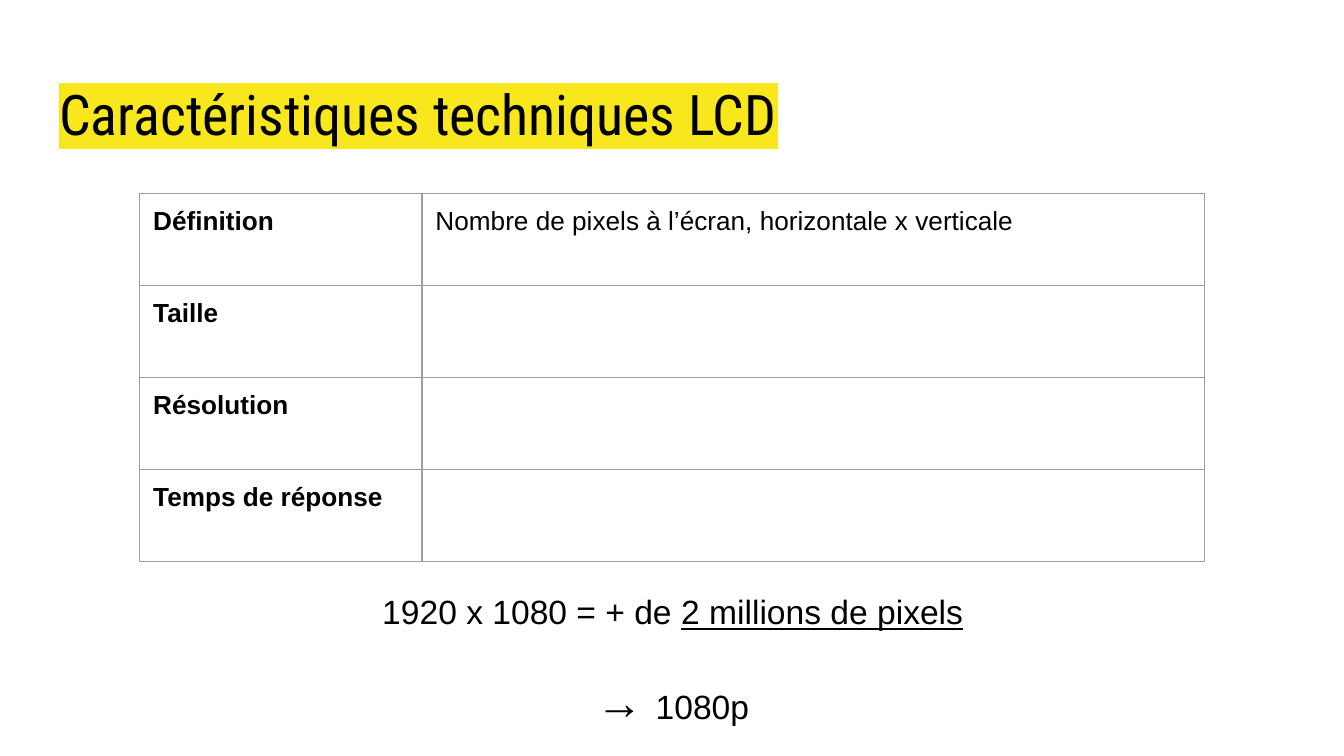
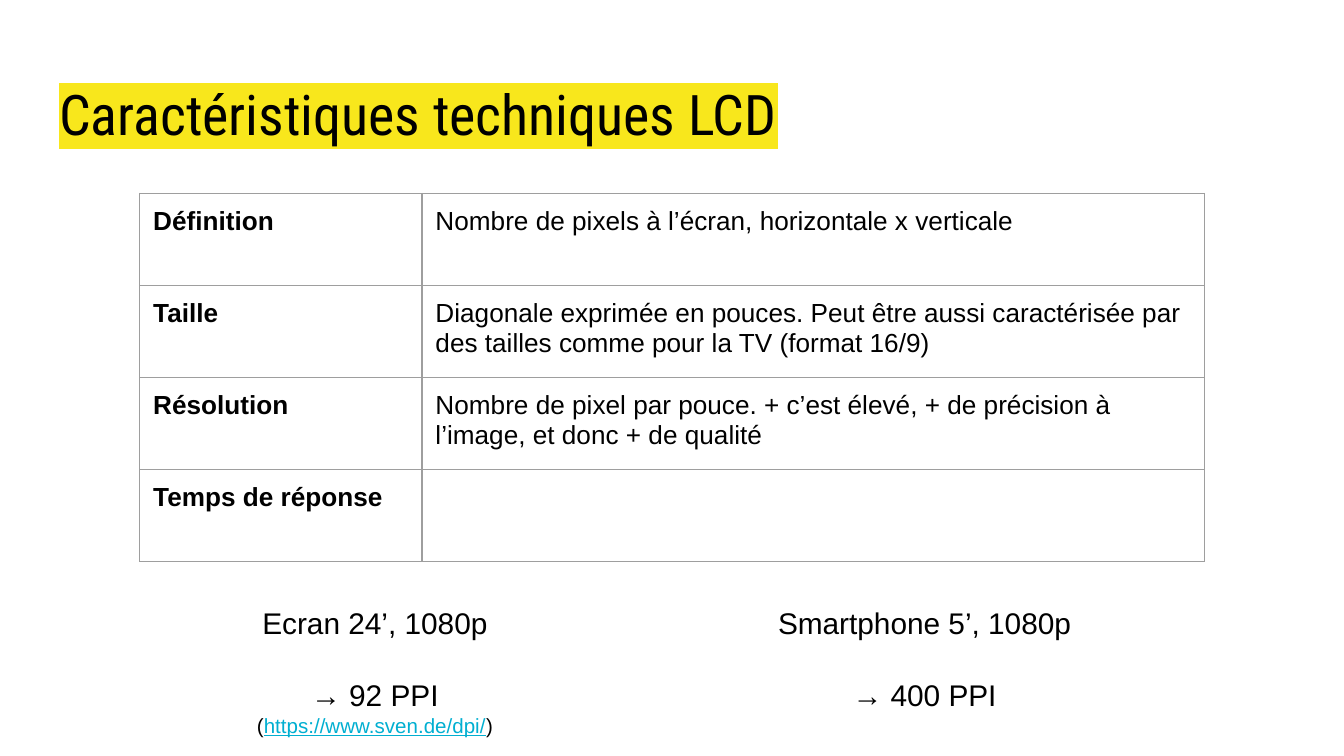
"""Builds two slides on the technical characteristics of LCD screens."""
from lxml import etree
from pptx import Presentation
from pptx.dml.color import RGBColor
from pptx.enum.text import MSO_ANCHOR, MSO_AUTO_SIZE, PP_ALIGN
from pptx.oxml.ns import qn
from pptx.util import Inches, Pt

LEFT, CENTER = PP_ALIGN.LEFT, PP_ALIGN.CENTER
TOP = MSO_ANCHOR.TOP
NO_AUTOFIT = MSO_AUTO_SIZE.NONE
TITLE_ONLY = 5

COLORS = {"text": "000000", "highlight": "F8E71C", "border": "9E9E9E", "link": "01AFD1"}
TITLE_FONT, BODY_FONT = "Roboto Condensed", "Arial"
TITLE = "Caractéristiques techniques LCD"
TERMS = ["Définition", "Taille", "Résolution", "Temps de réponse"]
DEFINITION = "Nombre de pixels à l’écran, horizontale x verticale"
SIZE = ("Diagonale exprimée en pouces. Peut être aussi caractérisée par "
        "des tailles comme pour la TV (format 16/9)")
RESOLUTION = ("Nombre de pixel par pouce. + c’est élevé, + de précision à "
              "l’image, et donc + de qualité")


class Deck:
    """Holds the style and the current slide."""

    def __init__(self):
        """Opens a 16:9 presentation."""
        self.presentation = Presentation()
        self.presentation.slide_width = Inches(10)
        self.presentation.slide_height = Inches(10) * 9 // 16
        self.slide = None

    def style(self, font, size, name=BODY_FONT, bold=False):
        """Applies one text style to a font."""
        font.size, font.name, font.bold = Pt(size), name, bold
        font.color.rgb = RGBColor.from_string(COLORS["text"])

    def inset(self, target):
        """Sets the margins of a text frame or a cell."""
        target.margin_left = target.margin_right = Inches(0.1)
        target.margin_top = target.margin_bottom = Inches(0.1)

    def prepare(self, shape, left, top, width, height):
        """Places a text shape and returns its wrapped, top-anchored frame."""
        shape.left, shape.top = Inches(left), Inches(top)
        shape.width, shape.height = Inches(width), Inches(height)
        frame = shape.text_frame
        frame.auto_size, frame.word_wrap = NO_AUTOFIT, True
        frame.vertical_anchor = TOP
        self.inset(frame)
        return frame

    def add_slide(self, title):
        """Starts a slide with a highlighted title."""
        self.slide = self.presentation.slides.add_slide(
            self.presentation.slide_layouts[TITLE_ONLY])
        frame = self.prepare(self.slide.shapes.title, 0.34, 0.49, 9.32, 0.63)
        paragraph = frame.paragraphs[0]
        paragraph.alignment = LEFT
        run = paragraph.add_run()
        run.text = title
        self.style(run.font, 30, TITLE_FONT)
        highlight = etree.Element(qn("a:highlight"))
        etree.SubElement(highlight, qn("a:srgbClr"), val=COLORS["highlight"])
        run.font._element.find(qn("a:solidFill")).addnext(highlight)

    def add_borders(self, cell):
        """Draws the four borders of a cell."""
        properties = cell._tc.get_or_add_tcPr()
        for side in ("lnL", "lnR", "lnT", "lnB"):
            line = etree.SubElement(properties, qn(f"a:{side}"), w=str(Pt(0.75)))
            fill = etree.SubElement(line, qn("a:solidFill"))
            etree.SubElement(fill, qn("a:srgbClr"), val=COLORS["border"])

    def add_definitions(self, definitions):
        """Adds the table of terms with their definitions."""
        table = self.slide.shapes.add_table(
            len(TERMS), 2, Inches(1.04), Inches(1.44), Inches(7.92), Inches(2.74)).table
        table.first_row = table.horz_banding = False
        table.columns[0].width, table.columns[1].width = Inches(2.1), Inches(5.82)
        for row, texts in enumerate(zip(TERMS, definitions)):
            for column, text in enumerate(texts):
                cell = table.cell(row, column)
                self.inset(cell)
                self.add_borders(cell)
                cell.fill.background()
                cell.text = text
                self.style(cell.text_frame.paragraphs[0].font, 14, bold=column == 0)

    def add_note(self, box, *lines):
        """Adds centred lines, each a gap, a size and runs of text and overrides."""
        frame = self.prepare(self.slide.shapes.add_textbox(0, 0, 0, 0), *box)
        for index, (gap, size, runs) in enumerate(lines):
            paragraph = frame.add_paragraph() if index else frame.paragraphs[0]
            paragraph.alignment = CENTER
            paragraph.space_before = Pt(gap)
            self.style(paragraph.font, size)
            for text, overrides in runs:
                run = paragraph.add_run()
                run.text = text
                if "size" in overrides:
                    run.font.size = Pt(overrides["size"])
                if "color" in overrides:
                    run.font.color.rgb = RGBColor.from_string(COLORS[overrides["color"]])
                if "underline" in overrides:
                    run.font.underline = overrides["underline"]


def main():
    """Builds and saves the deck."""
    deck = Deck()

    deck.add_slide(TITLE)
    deck.add_definitions([DEFINITION, "", "", ""])
    deck.add_note(
        (1.1, 4.3, 7.81, 0.91),
        (0, 18, [("1920 x 1080 = + de ", {}),
                 ("2 millions de pixels", {"underline": True})]),
        (22, 18, [("→ ", {"size": 25}), ("1080p", {})]))

    deck.add_slide(TITLE)
    deck.add_definitions([DEFINITION, SIZE, RESOLUTION, ""])
    deck.add_note(
        (1.04, 4.4, 3.5, 0.76),
        (0, 16, [("Ecran 24’, 1080p", {})]),
        (19.5, 16, [("→ 92 PPI", {})]),
        (0, 11, [("(", {}),
                 ("https://www.sven.de/dpi/", {"color": "link", "underline": True}),
                 (")", {})]))
    deck.add_note(
        (4.8, 4.4, 4.16, 0.99),
        (0, 16, [("Smartphone 5’, 1080p", {})]),
        (19.5, 16, [("→ 400 PPI", {})]))

    deck.presentation.save("out.pptx")


if __name__ == "__main__":
    main()
